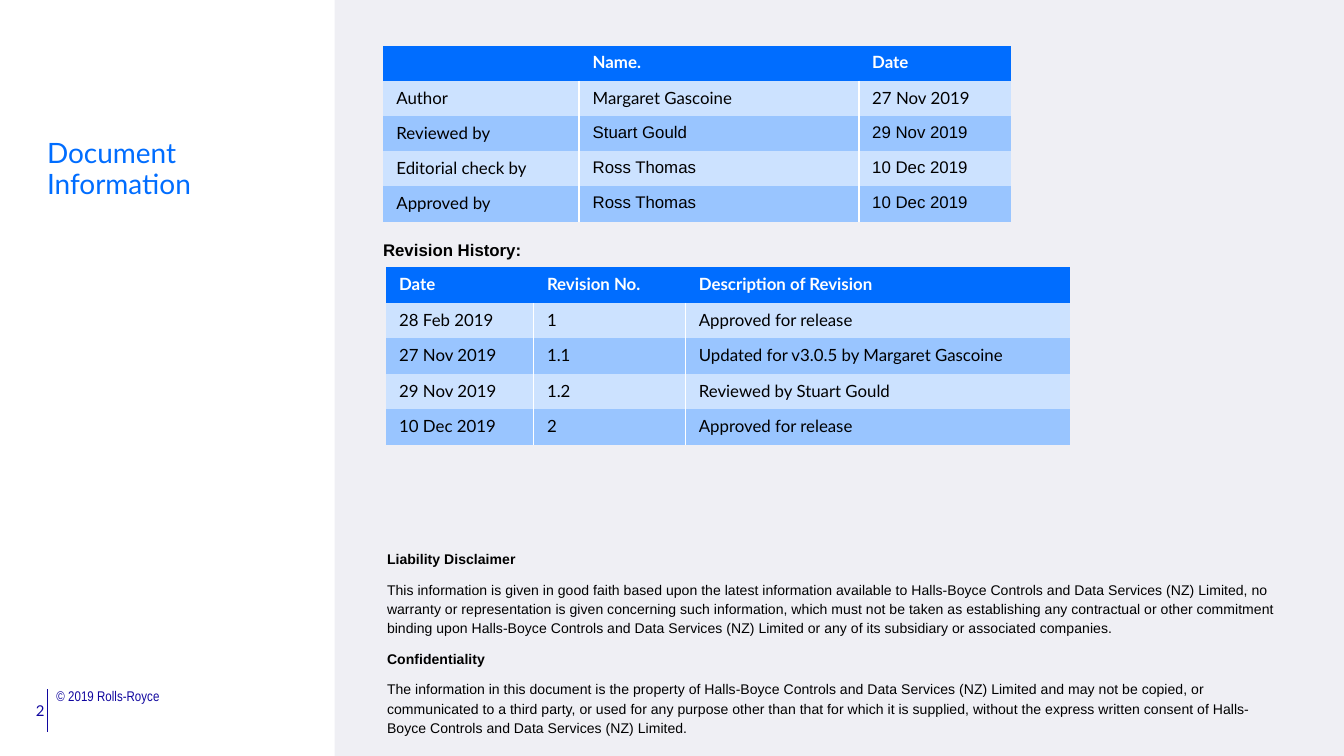
from dataclasses import dataclass

from lxml import etree
from pptx import Presentation
from pptx.dml.color import RGBColor
from pptx.enum.shapes import MSO_CONNECTOR, MSO_SHAPE
from pptx.enum.text import MSO_ANCHOR, PP_ALIGN
from pptx.oxml.ns import qn
from pptx.util import Inches, Pt

LEFT, RIGHT = PP_ALIGN.LEFT, PP_ALIGN.RIGHT
TOP = MSO_ANCHOR.TOP
RECTANGLE = MSO_SHAPE.RECTANGLE
STRAIGHT = MSO_CONNECTOR.STRAIGHT

COLORS = {
    "navy": "10069F",
    "blue": "006DFF",
    "light": "CCE2FF",
    "mid": "99C5FF",
    "panel": "EFEFF4",
    "white": "FFFFFF",
    "black": "000000",
}
SLIDE_WIDTH = Inches(10)
SLIDE_HEIGHT = SLIDE_WIDTH * 9 // 16
TITLE_ONLY = 5
COMPANY = "Halls-Boyce Controls and Data Services (NZ) Limited"


@dataclass
class Grid:
    left: float
    top: float
    widths: list[float]
    height: float
    rows: list[list[str]]
    arial_cells: set[tuple[int, int]]


@dataclass
class Para:
    text: str
    size: float
    font: str = "Arial"
    color: str = "black"
    bold: bool = False
    align: PP_ALIGN = LEFT
    line_spacing: float = 1.0
    gap: float = 0


APPROVALS = Grid(
    2.85, 0.34, [1.46, 2.08, 1.13], 1.31,
    [
        ["", "Name.", "Date"],
        ["Author", "Margaret Gascoine", "27 Nov 2019"],
        ["Reviewed by", "Stuart Gould", "29 Nov 2019"],
        ["Editorial check by", "Ross Thomas", "10 Dec 2019"],
        ["Approved by", "Ross Thomas", "10 Dec 2019"],
    ],
    {(row, col) for row in (2, 3, 4) for col in (1, 2)},
)
REVISIONS = Grid(
    2.87, 1.99, [1.1, 1.13, 2.86], 1.32,
    [
        ["Date", "Revision No.", "Description of Revision"],
        ["28 Feb 2019", "1", "Approved for release"],
        ["27 Nov 2019", "1.1", "Updated for v3.0.5 by Margaret Gascoine"],
        ["29 Nov 2019", "1.2", "Reviewed by Stuart Gould"],
        ["10 Dec 2019", "2", "Approved for release"],
    ],
    set(),
)
NOTICES = [
    ("Liability Disclaimer",
     "This information is given in good faith based upon the latest information "
     f"available to {COMPANY}, no warranty or representation is given concerning "
     "such information, which must not be taken as establishing any contractual or "
     f"other commitment binding upon {COMPANY} or any of its subsidiary or "
     "associated companies."),
    ("Confidentiality",
     f"The information in this document is the property of {COMPANY} and may not be "
     "copied, or communicated to a third party, or used for any purpose other than "
     "that for which it is supplied, without the express written consent of "
     f"{COMPANY}."),
]


def rgb(name: str) -> RGBColor:
    return RGBColor.from_string(COLORS[name])


def style_run(r, size: float, font: str, color: str, bold: bool = False) -> None:
    r.font.size = Pt(size)
    r.font.name = font
    r.font.bold = bold
    r.font.color.rgb = rgb(color)


def fill_text(tf, paras: list[Para], margins=(0.1, 0.05, 0.1, 0.05)) -> None:
    """Write the paragraphs; margins are left, top, right, bottom."""
    tf.word_wrap = True
    tf.vertical_anchor = TOP
    tf.margin_left, tf.margin_top, tf.margin_right, tf.margin_bottom = map(Inches, margins)
    for i, para in enumerate(paras):
        p = tf.add_paragraph() if i else tf.paragraphs[0]
        p.text = para.text
        p.alignment = para.align
        p.line_spacing = para.line_spacing
        p.space_before = Pt(para.gap if i else 0)
        p.space_after = Pt(para.gap)
        style_run(p.runs[0], para.size, para.font, para.color, para.bold)


def add_text(slide, box: tuple, paras: list[Para], **options) -> None:
    sp = slide.shapes.add_textbox(*map(Inches, box))
    fill_text(sp.text_frame, paras, **options)


def set_borders(cell, visible: set[str]) -> None:
    """Draw white 1 pt lines on the visible sides and none on the others."""
    tc_pr = cell._tc.get_or_add_tcPr()
    for side in "LRTB":
        ln = etree.SubElement(tc_pr, qn(f"a:ln{side}"), w=str(Pt(1)))
        if side in visible:
            fill = etree.SubElement(ln, qn("a:solidFill"))
            etree.SubElement(fill, qn("a:srgbClr"), val=COLORS["white"])
        else:
            etree.SubElement(ln, qn("a:noFill"))


def add_grid(slide, grid: Grid) -> None:
    n_rows, n_cols = len(grid.rows), len(grid.widths)
    table = slide.shapes.add_table(
        n_rows, n_cols, Inches(grid.left), Inches(grid.top),
        Inches(sum(grid.widths)), Inches(grid.height)).table
    for column, width in zip(table.columns, grid.widths):
        column.width = Inches(width)
    for i, texts in enumerate(grid.rows):
        header = i == 0
        fill = "blue" if header else ("mid", "light")[i % 2]
        for j, text in enumerate(texts):
            cell = table.cell(i, j)
            sides = {s for s, inner in (("L", j > 0), ("R", j < n_cols - 1)) if inner}
            set_borders(cell, set() if header else sides)
            cell.fill.solid()
            cell.fill.fore_color.rgb = rgb(fill)
            p = cell.text_frame.paragraphs[0]
            if text:
                p.text = text
                font = "Arial" if (i, j) in grid.arial_cells else "Lato"
                style_run(p.runs[0], 9, font, "white" if header else "black", header)
            else:
                etree.SubElement(p._p, qn("a:endParaRPr"), sz="900")


def add_frame(slide) -> None:
    """Grey panel, footer rule, copyright line and page number."""
    panel_left = Inches(2.49)
    panel = slide.shapes.add_shape(
        RECTANGLE, panel_left, 0, SLIDE_WIDTH - panel_left, SLIDE_HEIGHT)
    panel.shadow.inherit = False
    panel.fill.solid()
    panel.fill.fore_color.rgb = rgb("panel")
    panel.line.fill.background()

    rule = slide.shapes.add_connector(
        STRAIGHT, Inches(0.35), Inches(5.13), Inches(0.35), Inches(5.45))
    rule.line.color.rgb = rgb("navy")
    rule.line.width = Pt(0.5)
    etree.SubElement(rule._element.spPr, qn("a:effectLst"))

    add_text(slide, (0.4, 5.13, 2.22, 0.34),
             [Para("© 2019 Rolls-Royce", 7.5, "Arial Narrow", "navy", line_spacing=0.9)],
             margins=(0.02, 0, 0, 0))
    add_text(slide, (0.05, 5.17, 0.38, 0.24), [Para("2", 8, "Lato", "navy", align=RIGHT)])


def main() -> None:
    prs = Presentation()
    prs.slide_width, prs.slide_height = SLIDE_WIDTH, SLIDE_HEIGHT
    slide = prs.slides.add_slide(prs.slide_layouts[TITLE_ONLY])
    add_frame(slide)

    title = slide.shapes.title
    title.left, title.top, title.width, title.height = map(Inches, (0.25, 0.99, 1.95, 1.05))
    fill_text(title.text_frame,
              [Para("Document Information", 15, "Lato", "blue", line_spacing=0.9)])

    add_grid(slide, REVISIONS)
    add_grid(slide, APPROVALS)

    indented = (0.13, 0.05, 0.1, 0.05)
    notices = [Para(text, 7.5, bold=bold, line_spacing=1.15, gap=3)
               for heading, body in NOTICES
               for text, bold in ((heading, True), (body, False))]
    add_text(slide, (2.75, 4.03, 6.86, 1.5), notices, margins=indented)
    add_text(slide, (2.72, 1.71, 1.61, 0.26),
             [Para("Revision History:", 9, bold=True, line_spacing=1.15, gap=3)],
             margins=indented)
    prs.save("out.pptx")


if __name__ == "__main__":
    main()
